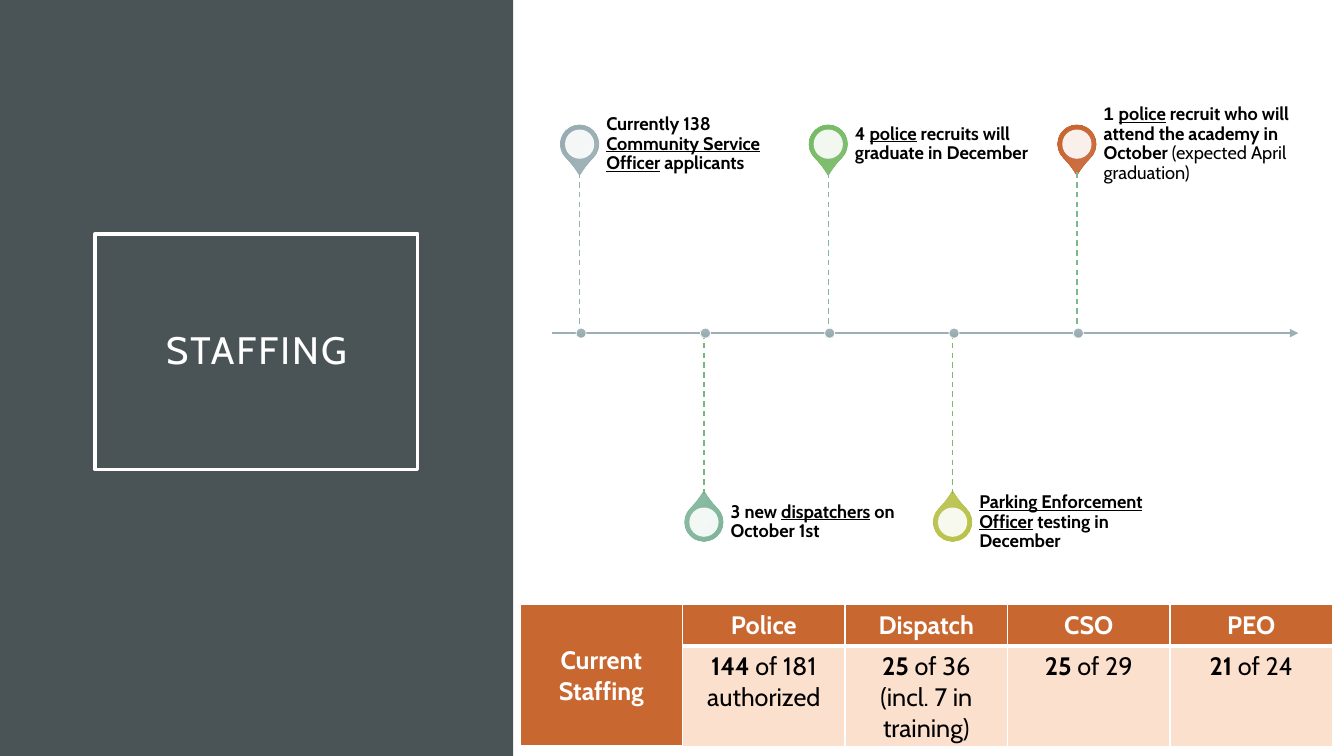
from lxml import etree
from pptx import Presentation
from pptx.dml.color import RGBColor
from pptx.enum.dml import MSO_LINE
from pptx.enum.shapes import MSO_CONNECTOR, MSO_SHAPE
from pptx.enum.text import MSO_ANCHOR, PP_ALIGN
from pptx.oxml.ns import qn
from pptx.util import Inches, Pt

RECT, OVAL, TEAR = MSO_SHAPE.RECTANGLE, MSO_SHAPE.OVAL, MSO_SHAPE.TEAR
LINE, DASH = MSO_CONNECTOR.STRAIGHT, MSO_LINE.DASH
MID, TOP = MSO_ANCHOR.MIDDLE, MSO_ANCHOR.TOP
LEFT, CENTER = PP_ALIGN.LEFT, PP_ALIGN.CENTER

ROWS, COLS = 75, 133.33
CELL = Inches(7.5) / ROWS
FONT = "Cabin"
WHITE, BLACK, SLATE, STEEL = "FFFFFF", "000000", "4A5356", "9BAFB5"
RUST, PEACH = "C96731", "FBE0CD"
SHADE = ("A3B5BB", "93A9AF")

EVENTS = [
    (STEEL, SHADE, STEEL,
     [("Currently 138 ", "b"), ("Community Service Officer", "bu"), (" applicants", "b")]),
    ("83B79E", ("8DBCA5", "7BB398"), "74B97A",
     [("3 new ", "b"), ("dispatchers", "bu"), (" on October 1st", "b")]),
    ("7ABC69", ("85C076", "73B960"), "83B79E",
     [("4 ", "b"), ("police", "bu"), (" recruits will graduate in December", "b")]),
    ("BAC34D", ("BEC65E", "B8C243"), "7ABC69",
     [("Parking Enforcement Officer", "bu"), (" testing in December", "b")]),
    (RUST, ("CC734B", "C86128"), "7BB88C",
     [("1 ", "ba"), ("police", "bu"),
      (" recruit who will attend the academy in October", "b"),
      (" (expected April graduation)", "")]),
]
STAFF = [
    ("Police", [[("144 ", "b"), ("of 181 authorized", "")]]),
    ("Dispatch", [[("25 ", "b"), ("of 36", "")], [("(incl. 7 in training)", "")]]),
    ("CSO", [[("25 ", "b"), ("of 29", "")]]),
    ("PEO", [[("21 ", "b"), ("of 24", "")]]),
]


def grid(*cells):
    """Turn grid cells into slide lengths."""
    return [round(n * CELL) for n in cells]


def rgb(code):
    """Make a colour from a hex string."""
    return RGBColor.from_string(code)


def write(frame, paras, size, color, align=LEFT, lead=None):
    """Fill a text frame run by run; marks are b bold, u underline, a Arial."""
    frame.word_wrap = True
    for i, runs in enumerate(paras):
        para = frame.add_paragraph() if i else frame.paragraphs[0]
        para.alignment = align
        if lead:
            para.line_spacing = lead
        for text, marks in runs:
            run = para.add_run()
            run.text = text
            font = run.font
            font.name = "Arial" if "a" in marks else FONT
            font.size, font.color.rgb = Pt(size), rgb(color)
            font.bold, font.underline = "b" in marks, "u" in marks


def pad(frame, left, top, right, bottom):
    """Set the insets of a text frame in grid cells."""
    frame.margin_left, frame.margin_top, frame.margin_right, frame.margin_bottom = grid(
        left, top, right, bottom)


def shape(slide, kind, box, fill=None, line=None, width=0.5):
    """Add a preset shape with a plain, shaded or empty fill."""
    item = slide.shapes.add_shape(kind, *grid(*box))
    item.shadow.inherit = False
    if isinstance(fill, tuple):
        item.fill.gradient()
        item.fill.gradient_angle = 270
        for stop, code in zip(item.fill.gradient_stops, fill):
            stop.color.rgb = rgb(code)
    elif fill:
        item.fill.solid()
        item.fill.fore_color.rgb = rgb(fill)
    else:
        item.fill.background()
    if line:
        item.line.color.rgb, item.line.width = rgb(line), Pt(width)
    else:
        item.line.fill.background()
    return item


def disc(slide, x, y, size, *style):
    """Add a circle around a centre point."""
    return shape(slide, OVAL, (x - size / 2, y - size / 2, size, size), *style)


def rule(slide, ends, color, width):
    """Add a straight line without a shadow."""
    item = slide.shapes.add_connector(LINE, *grid(*ends))
    item.line.color.rgb, item.line.width = rgb(color), Pt(width)
    etree.SubElement(item._element.spPr, qn("a:effectLst"))
    return item


def panel(slide, box):
    """Draw the dark side panel with its framed title."""
    x, y, w, h = box
    shape(slide, RECT, box, SLATE)
    wide, high = 32, 23.4
    card = shape(slide, RECT, (x + (w - wide) / 2, y + 23.2, wide, high), None, WHITE, 2.5)
    frame = card.text_frame
    pad(frame, 2, 2, 2, 2)
    frame.vertical_anchor = MID
    write(frame, [[("STAFFING", "")]], 27.3, WHITE, CENTER, 0.9)
    frame.paragraphs[0].runs[0].font._element.set("spc", "150")


def event(slide, x, axis, row, turn, item):
    """Draw one pin with its label, stalk and dot on the axis."""
    edge, shade, stalk, runs = item
    size, high = 3.8, 5.6
    mid = row + high / 2
    drop = shape(slide, TEAR, (x - size / 2, mid - size / 2, size, size), shade, edge)
    drop.adjustments[0], drop.rotation = 1.15, turn
    core = disc(slide, x, mid, 2.9, WHITE)
    tint = core.fill._xPr.find(".//" + qn("a:srgbClr"))
    etree.SubElement(tint, qn("a:alpha")).set("val", "90000")
    label = slide.shapes.add_textbox(*grid(x + 2.65, row, 19.5, high))
    frame = label.text_frame
    pad(frame, 0, 0, 0.9, 0)
    frame.vertical_anchor = MID
    write(frame, [runs], 13, BLACK, LEFT, 0.9)
    tip = row + high if row < axis else row
    rule(slide, (x, min(tip, axis), x, max(tip, axis)), stalk, 1).line.dash_style = DASH
    disc(slide, x + 0.15, axis, 1, SHADE, WHITE)


def timeline(slide, box):
    """Draw the axis and its events, above and below in turn."""
    x, y, w, h = box
    axis = y + h / 2
    arrow = rule(slide, (x, axis, x + w, axis), STEEL, 1.5)
    etree.SubElement(arrow.line._get_or_add_ln(), qn("a:tailEnd")).set("type", "triangle")
    for i, item in enumerate(EVENTS):
        row, turn = ((y, 135), (y + h - 5.6, 315))[i % 2]
        event(slide, x + 2.7 + i * w / 6, axis, row, turn, item)


def paint(cell, fill, edges):
    """Give a table cell white borders and a fill."""
    props = cell._tc.get_or_add_tcPr()
    for side, width in edges.items():
        edge = etree.SubElement(props, qn("a:ln" + side), w=str(Pt(width)))
        tone = etree.SubElement(edge, qn("a:solidFill"))
        etree.SubElement(tone, qn("a:srgbClr"), val=WHITE)
    cell.fill.solid()
    cell.fill.fore_color.rgb = rgb(fill)


def table(slide, box):
    """Draw the staffing table."""
    grade = slide.shapes.add_table(2, len(STAFF) + 1, *grid(*box)).table
    grade.horz_banding = False
    for row in grade.rows:
        row.height = grid(4.1)[0]
    side = grade.cell(0, 0)
    side.merge(grade.cell(1, 0))
    side.vertical_anchor = MID
    write(side.text_frame, [[("Current Staffing", "b")]], 18, WHITE, CENTER)
    for row in range(2):
        paint(grade.cell(row, 0), RUST, {"L": 1, "R": 1, "T": 1, "B": 3})
    for col, (name, paras) in enumerate(STAFF, 1):
        head, body = grade.cell(0, col), grade.cell(1, col)
        head.vertical_anchor = body.vertical_anchor = TOP
        write(head.text_frame, [[(name, "b")]], 18, WHITE, CENTER)
        write(body.text_frame, paras, 18, BLACK, CENTER)
        paint(head, RUST, {"L": 1, "R": 1, "T": 1, "B": 3})
        paint(body, PEACH, {"L": 1, "R": 1, "T": 3, "B": 1})


def main():
    """Build the slide and save it."""
    deck = Presentation()
    deck.slide_width, deck.slide_height = grid(COLS, ROWS)
    slide = deck.slides.add_slide(deck.slide_layouts[6])
    panel(slide, (0, 0, 50.9, ROWS))
    timeline(slide, (54.8, 11.5, 74, 43.1))
    table(slide, (51.6, 60, 80.6, 8.2))
    deck.save("out.pptx")


if __name__ == "__main__":
    main()
